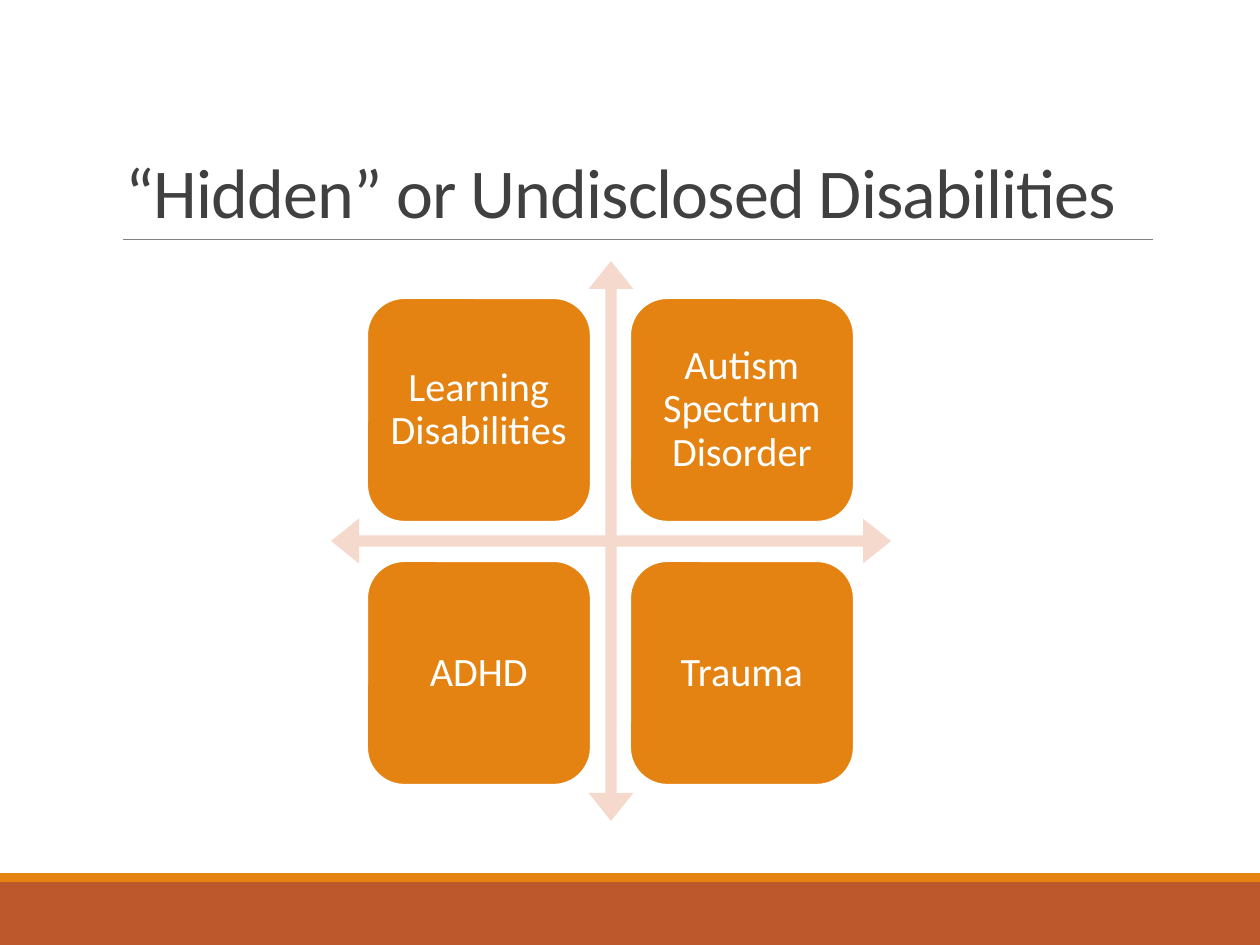
from lxml import etree
from pptx import Presentation
from pptx.dml.color import RGBColor
from pptx.enum.shapes import MSO_CONNECTOR, MSO_SHAPE
from pptx.enum.text import MSO_ANCHOR, PP_ALIGN
from pptx.oxml.ns import qn
from pptx.util import Emu, Pt

RECT = MSO_SHAPE.RECTANGLE
ROUND = MSO_SHAPE.ROUNDED_RECTANGLE
CROSS = MSO_SHAPE.QUAD_ARROW
LINE = MSO_CONNECTOR.STRAIGHT
LEFT, CENTER = PP_ALIGN.LEFT, PP_ALIGN.CENTER
MIDDLE, BOTTOM = MSO_ANCHOR.MIDDLE, MSO_ANCHOR.BOTTOM

SCALE = 914400 / 126
FONT = "Calibri"
COLORS = {
    "rust": "BD582C",
    "orange": "E48312",
    "blush": "F5D9CC",
    "gray": "808080",
    "dark": "404040",
    "white": "FFFFFF",
}


def px(n):
    return Emu(round(n * SCALE))


def color(name):
    return RGBColor.from_string(COLORS[name])


class Deck:
    def __init__(self, width, height):
        self.prs = Presentation()
        self.prs.slide_width, self.prs.slide_height = px(width), px(height)
        self.slide = self.prs.slides.add_slide(self.prs.slide_layouts[5])

    def label(self, frame, text, size, tint, align, anchor, spacing):
        frame.word_wrap = True
        frame.vertical_anchor = anchor
        frame.text = text
        para = frame.paragraphs[0]
        para.alignment = align
        para.line_spacing = spacing
        run = para.runs[0]
        run.font.name = FONT
        run.font.size = Pt(size)
        run.font.color.rgb = color(tint)
        return run

    def title(self, text, x, y, w, h):
        box = self.slide.shapes.title
        box.left, box.top, box.width, box.height = map(px, (x, y, w, h))
        run = self.label(box.text_frame, text, 40, "dark", LEFT, BOTTOM, 0.85)
        run._r.get_or_add_rPr().set("spc", "-50")

    def shape(self, kind, x, y, w, h, fill):
        item = self.slide.shapes.add_shape(kind, *map(px, (x, y, w, h)))
        item.shadow.inherit = False
        item.fill.solid()
        item.fill.fore_color.rgb = color(fill)
        item.line.fill.background()
        return item

    def rule(self, x1, x2, y):
        line = self.slide.shapes.add_connector(LINE, px(x1), px(y), px(x2), px(y))
        line.line.color.rgb = color("gray")
        line.line.width = Pt(0.5)
        etree.SubElement(line._element.spPr, qn("a:effectLst"))

    def cross(self, x, y, size):
        item = self.shape(CROSS, x, y, size, size, "blush")
        for i, value in enumerate((0.02, 0.04, 0.05)):
            item.adjustments[i] = value

    def tile(self, text, x, y, size):
        item = self.shape(ROUND, x, y, size, size, "orange")
        item.line.color.rgb = color("white")
        item.line.width = Pt(1.25)
        frame = item.text_frame
        frame.margin_left = frame.margin_right = px(12)
        frame.margin_top = frame.margin_bottom = px(12)
        self.label(frame, text, 23, "white", CENTER, MIDDLE, 0.9)


def main():
    deck = Deck(1260, 945)
    deck.shape(RECT, 0, 882, 1260, 63, "rust")
    deck.shape(RECT, 0, 873, 1260, 9, "orange")
    deck.rule(123, 1153, 239)
    deck.title("“Hidden” or Undisclosed Disabilities", 113, 39, 1079, 200)
    deck.cross(331, 261, 560)
    tiles = ["Learning Disabilities", "Autism Spectrum Disorder", "ADHD", "Trauma"]
    for i, text in enumerate(tiles):
        row, col = divmod(i, 2)
        deck.tile(text, 367 + 263 * col, 298 + 263 * row, 224)
    deck.prs.save("out.pptx")


if __name__ == "__main__":
    main()
